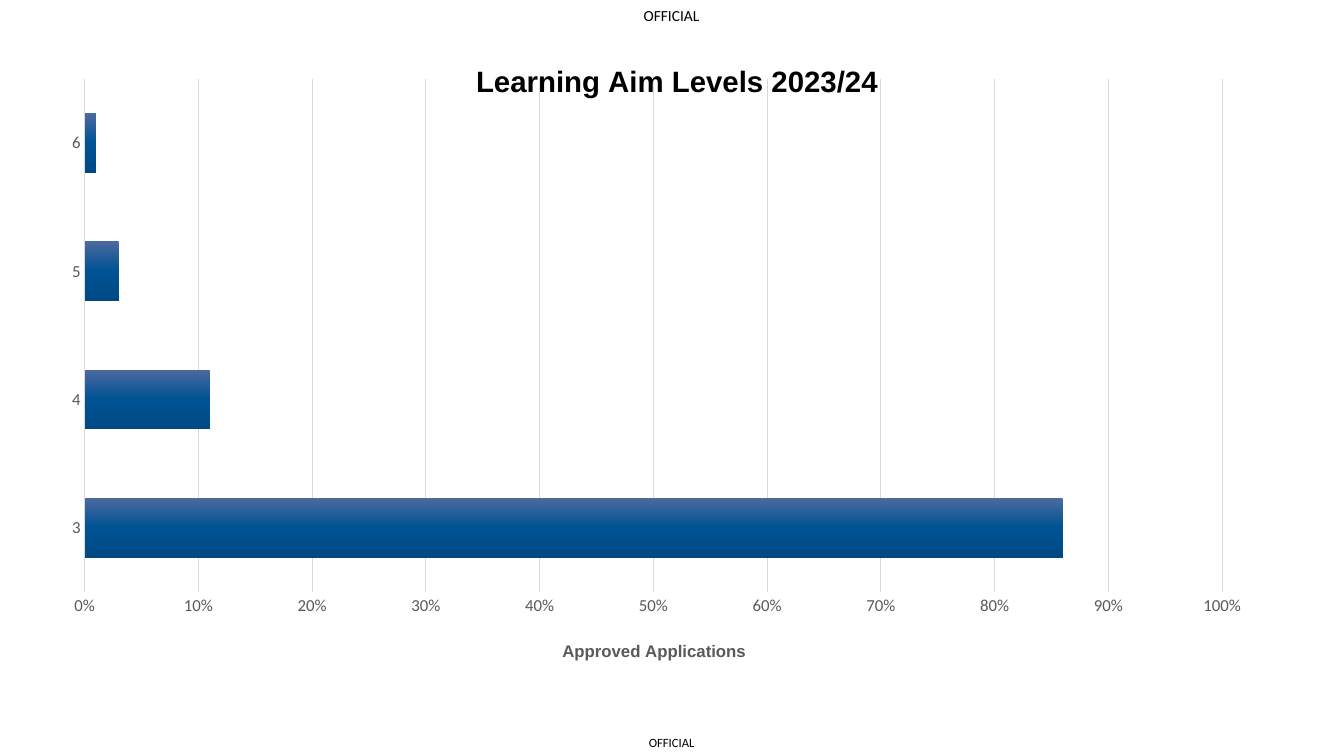
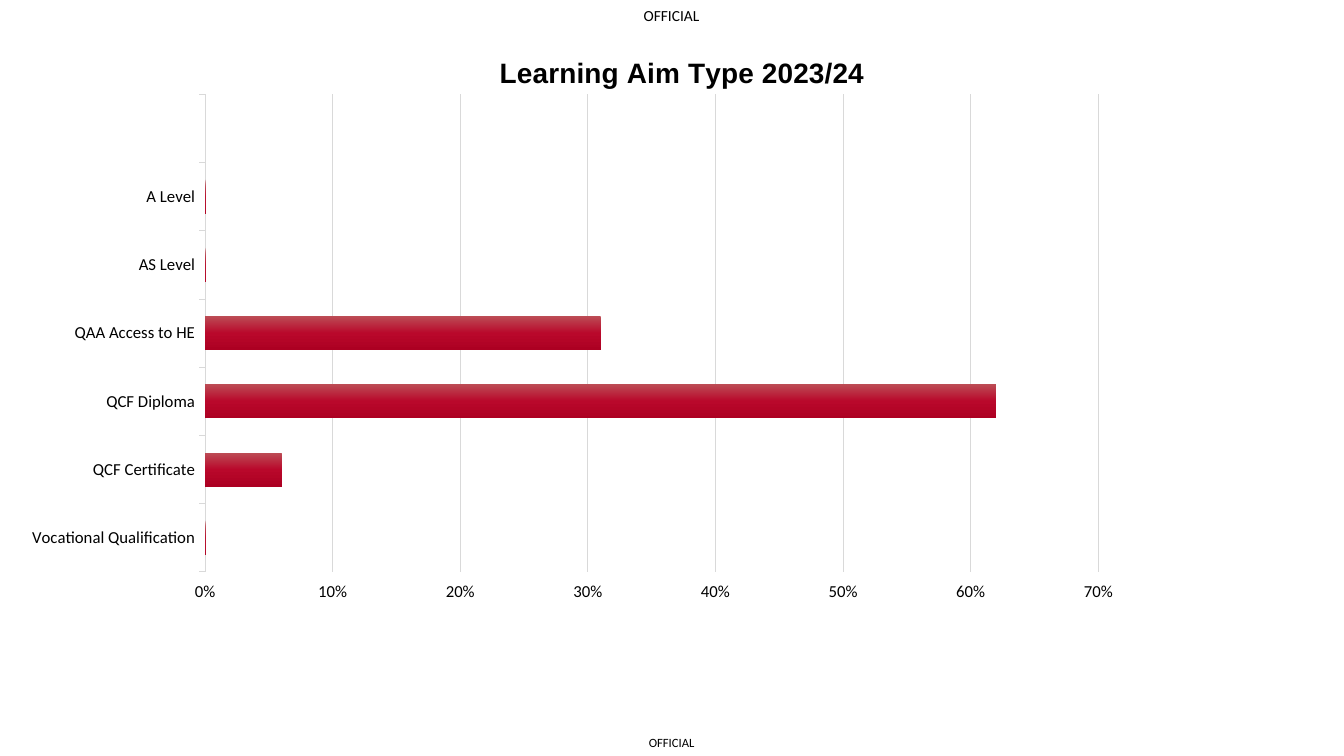
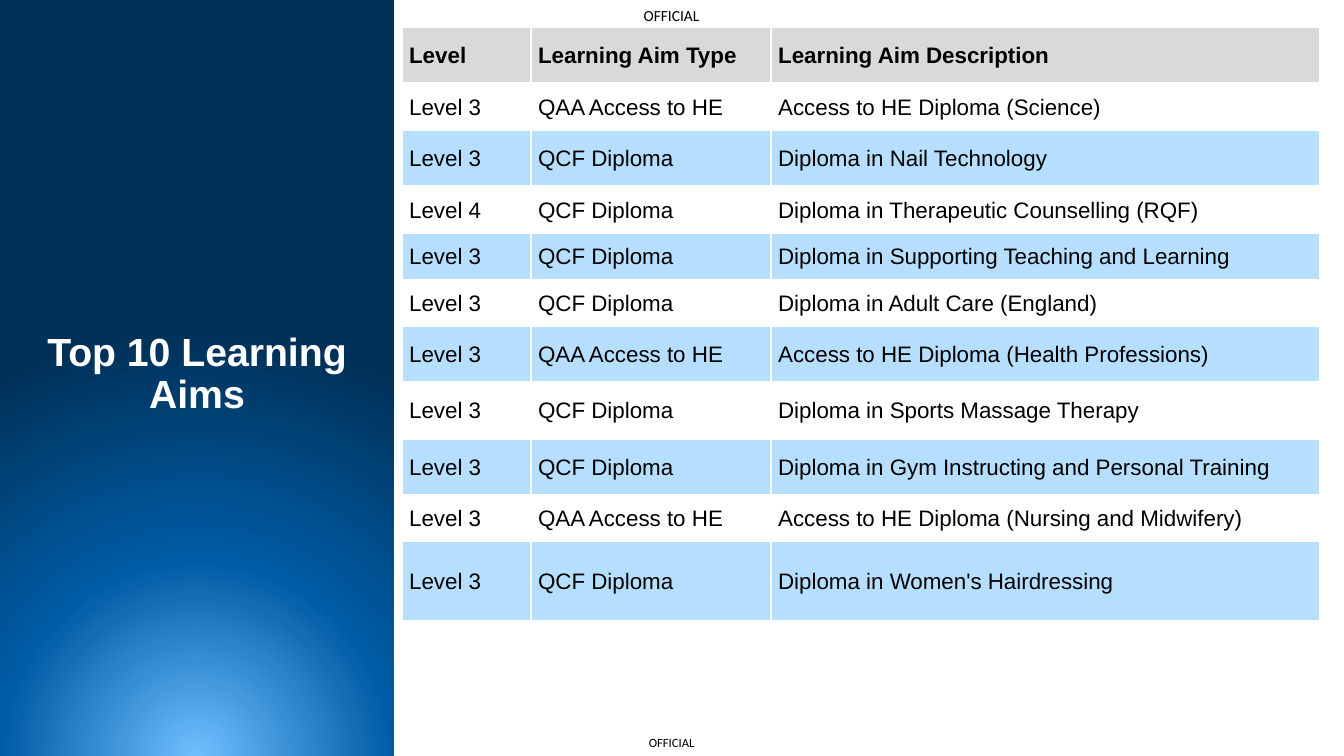
from lxml import etree
from pptx import Presentation
from pptx.chart.data import CategoryChartData
from pptx.dml.color import RGBColor
from pptx.enum.chart import XL_CHART_TYPE as ChartType, XL_TICK_MARK as Tick
from pptx.enum.shapes import MSO_SHAPE as Shape
from pptx.enum.text import MSO_ANCHOR as Anchor, PP_ALIGN as Align
from pptx.oxml import parse_xml
from pptx.oxml.ns import nsdecls, qn
from pptx.util import Cm, Pt

BLACK = RGBColor(0x00, 0x00, 0x00)
WHITE = RGBColor(0xFF, 0xFF, 0xFF)
DARK_GREY = RGBColor(0x59, 0x59, 0x59)
LINE_GREY = RGBColor(0xD9, 0xD9, 0xD9)
BAND_BLUE = RGBColor(0xB6, 0xDF, 0xFF)
BAR_BLUE = [(0, RGBColor(0x4B, 0x6A, 0x9F)), (50, RGBColor(0x00, 0x52, 0x93)),
            (100, RGBColor(0x00, 0x49, 0x83))]
BAR_RED = [(0, RGBColor(0xBC, 0x4C, 0x55)), (50, RGBColor(0xB9, 0x08, 0x2B)),
           (100, RGBColor(0xAC, 0x00, 0x22))]
PANEL_BLUE = [(0, RGBColor(0x6E, 0xBF, 0xFF)), (46, RGBColor(0x00, 0x5C, 0xA5)),
              (100, RGBColor(0x00, 0x31, 0x58))]
DOWNWARD = '<a:lin ang="5400000" scaled="0"/>'
FROM_BELOW = ('<a:path path="circle"><a:fillToRect l="50000" t="130000" '
              'r="50000" b="-30000"/></a:path>')


def set_gradient(fill, sp_pr, stops, direction):
    """Fill with any number of (percent, colour) stops."""
    fill.gradient()
    stop_xml = "".join(f'<a:gs pos="{pos * 1000}"><a:srgbClr val="{color}"/></a:gs>'
                       for pos, color in stops)
    grad = parse_xml(f'<a:gradFill {nsdecls("a")} rotWithShape="1">'
                     f'<a:gsLst>{stop_xml}</a:gsLst>{direction}</a:gradFill>')
    sp_pr.replace(sp_pr.find(qn("a:gradFill")), grad)


def set_layout(parent, index, **values):
    """Place a chart part by fractions of the chart's size."""
    old = parent.find(qn("c:layout"))
    if old is not None:
        parent.remove(old)
    layout = parse_xml(f'<c:layout {nsdecls("c")}><c:manualLayout/></c:layout>')
    for tag, value in values.items():
        etree.SubElement(layout[0], qn(f"c:{tag}")).set("val", str(value))
    parent.insert(index, layout)


prs = Presentation()
prs.slide_width, prs.slide_height = Cm(33.87), Cm(19.05)

# Shared marking at the top and foot of each slide
MARKINGS = [(15.82, 0, 2.21, 0.79, 11), (16, 18.36, 1.85, 0.69, 9)]
for _ in range(3):
    slide = prs.slides.add_slide(prs.slide_layouts[6])
    for x, y, w, h, size in MARKINGS:
        tf = slide.shapes.add_textbox(Cm(x), Cm(y), Cm(w), Cm(h)).text_frame
        tf.word_wrap = True
        tf.vertical_anchor = Anchor.MIDDLE
        tf.margin_left = tf.margin_right = tf.margin_top = tf.margin_bottom = 0
        p = tf.paragraphs[0]
        p.alignment = Align.CENTER
        r = p.add_run()
        r.text = "OFFICIAL"
        r.font.name, r.font.size, r.font.color.rgb = "Calibri", Pt(size), BLACK

# Slides 1 and 2: bar charts
CHARTS = [
    dict(title="Learning Aim Levels 2023/24", title_size=21, title_at=(0.336, 0.041),
         box=(1.45, 0.79, 30.99, 15.98), plot=(0.022, 0.075, 0.925, 0.81),
         cats=["3", "4", "5", "6"], vals=[0.86, 0.11, 0.03, 0.01], top=1,
         bars=BAR_BLUE, gap=115, overlap=-20, text=DARK_GREY, tick=Tick.NONE,
         axis_line=1, axis_title="Approved Applications"),
    dict(title="Learning Aim Type 2023/24", title_size=20, title_at=(0.359, 0.043),
         box=(0.81, 0.61, 32.36, 15.27), plot=(0.133, 0.116, 0.697, 0.788),
         cats=["Vocational Qualification", "QCF Certificate", "QCF Diploma",
               "QAA Access to HE", "AS Level", "A Level", ""],
         vals=[0, 0.06, 0.62, 0.31, 0, 0, None], top=0.7,
         bars=BAR_RED, gap=100, overlap=0, text=BLACK, tick=Tick.OUTSIDE,
         axis_line=0.75, axis_title=None),
]
for slide, c in zip(prs.slides, CHARTS):
    data = CategoryChartData(number_format="0%")
    data.categories = c["cats"]
    data.add_series("Series 1", c["vals"])
    chart = slide.shapes.add_chart(ChartType.BAR_CLUSTERED,
                                   *[Cm(v) for v in c["box"]], data).chart
    chart.has_legend = False
    chart.font.name, chart.font.size, chart.font.color.rgb = "Calibri", Pt(10), BLACK

    plot = chart.plots[0]
    plot.vary_by_categories = False
    plot.gap_width, plot.overlap = c["gap"], c["overlap"]
    series = plot.series[0]
    series.invert_if_negative = False
    set_gradient(series.format.fill, series._element.find(qn("c:spPr")), c["bars"], DOWNWARD)

    cat_axis, val_axis = chart.category_axis, chart.value_axis
    for axis in (cat_axis, val_axis):
        axis.major_tick_mark, axis.minor_tick_mark = c["tick"], Tick.NONE
        font = axis.tick_labels.font
        font.name, font.size, font.color.rgb = "Calibri", Pt(12), c["text"]
    cat_axis.format.line.color.rgb = LINE_GREY
    cat_axis.format.line.width = Pt(c["axis_line"])
    val_axis.format.line.fill.background()
    val_axis.minimum_scale, val_axis.maximum_scale, val_axis.major_unit = 0, c["top"], 0.1
    val_axis.tick_labels.number_format = "0%"
    val_axis.tick_labels.number_format_is_linked = False
    val_axis.has_major_gridlines = True
    grid = val_axis.major_gridlines.format.line
    grid.color.rgb, grid.width = LINE_GREY, Pt(0.75)

    chart.has_title = True
    titles = [(chart.chart_title, c["title"], c["title_size"], BLACK, c["title_at"])]
    if c["axis_title"]:
        val_axis.has_title = True
        titles.append((val_axis.axis_title, c["axis_title"], 12, DARK_GREY, (0.408, 0.957)))
    for title, text, size, color, (x, y) in titles:
        r = title.text_frame.paragraphs[0].add_run()
        r.text = text
        r.font.name, r.font.size, r.font.bold = "Arial", Pt(size), True
        r.font.color.rgb = color
        set_layout(title._element, 1, xMode="edge", yMode="edge", x=x, y=y)
    x, y, w, h = c["plot"]
    set_layout(chart._chartSpace.chart.plotArea, 0, layoutTarget="inner",
               xMode="edge", yMode="edge", x=x, y=y, w=w, h=h)

# Slide 3: title panel and table
slide = prs.slides[2]
panel = slide.shapes.add_shape(Shape.RECTANGLE, 0, 0, Cm(9.93), prs.slide_height)
panel.shadow.inherit = False
panel.line.fill.background()
set_gradient(panel.fill, panel._element.spPr, PANEL_BLUE, FROM_BELOW)
tf = panel.text_frame
tf.word_wrap = True
tf.vertical_anchor = Anchor.MIDDLE
tf.margin_bottom = Cm(0.3)
p = tf.paragraphs[0]
p.alignment, p.line_spacing = Align.CENTER, 0.9
r = p.add_run()
r.text = "Top 10 Learning Aims"
r.font.name, r.font.size, r.font.bold, r.font.color.rgb = "Arial", Pt(28), True, WHITE

ACCESS, DIPLOMA = "QAA Access to HE", "QCF Diploma"
ROWS = [
    ("Level", "Learning Aim Type", "Learning Aim Description"),
    ("Level 3", ACCESS, "Access to HE Diploma (Science)"),
    ("Level 3", DIPLOMA, "Diploma in Nail Technology"),
    ("Level 4", DIPLOMA, "Diploma in Therapeutic Counselling (RQF)"),
    ("Level 3", DIPLOMA, "Diploma in Supporting Teaching and Learning"),
    ("Level 3", DIPLOMA, "Diploma in Adult Care (England)"),
    ("Level 3", ACCESS, "Access to HE Diploma (Health Professions)"),
    ("Level 3", DIPLOMA, "Diploma in Sports Massage Therapy"),
    ("Level 3", DIPLOMA, "Diploma in Gym Instructing and Personal Training"),
    ("Level 3", ACCESS, "Access to HE Diploma (Nursing and Midwifery)"),
    ("Level 3", DIPLOMA, "Diploma in Women's Hairdressing"),
]
COL_WIDTHS = [3.25, 6.05, 13.82]
ROW_HEIGHTS = [1.4, 1.2, 1.4, 1.2, 1.15, 1.18, 1.4, 1.45, 1.4, 1.18, 2]
table = slide.shapes.add_table(len(ROWS), len(COL_WIDTHS), Cm(10.13), Cm(0.69),
                               Cm(sum(COL_WIDTHS)), Cm(sum(ROW_HEIGHTS))).table
table.horz_banding = False
for col, width in zip(table.columns, COL_WIDTHS):
    col.width = Cm(width)
for i, (row, height, texts) in enumerate(zip(table.rows, ROW_HEIGHTS, ROWS)):
    row.height = Cm(height)
    for cell, text in zip(row.cells, texts):
        cell.vertical_anchor = Anchor.MIDDLE
        cell.margin_left = Cm(0.18)
        cell.margin_right = cell.margin_top = Cm(0.03)
        cell.margin_bottom = 0
        if i % 2:
            cell.fill.background()
        else:
            cell.fill.solid()
            cell.fill.fore_color.rgb = BAND_BLUE if i else LINE_GREY
        for k, side in enumerate(("lnL", "lnR", "lnT", "lnB")):
            cell._tc.tcPr.insert(k, parse_xml(
                f'<a:{side} {nsdecls("a")} w="{Pt(1)}"><a:solidFill>'
                f'<a:srgbClr val="{WHITE}"/></a:solidFill></a:{side}>'))
        r = cell.text_frame.paragraphs[0].add_run()
        r.text = text
        r.font.name, r.font.size, r.font.bold = "Arial", Pt(16), i == 0
        r.font.color.rgb = BLACK

prs.save("out.pptx")
